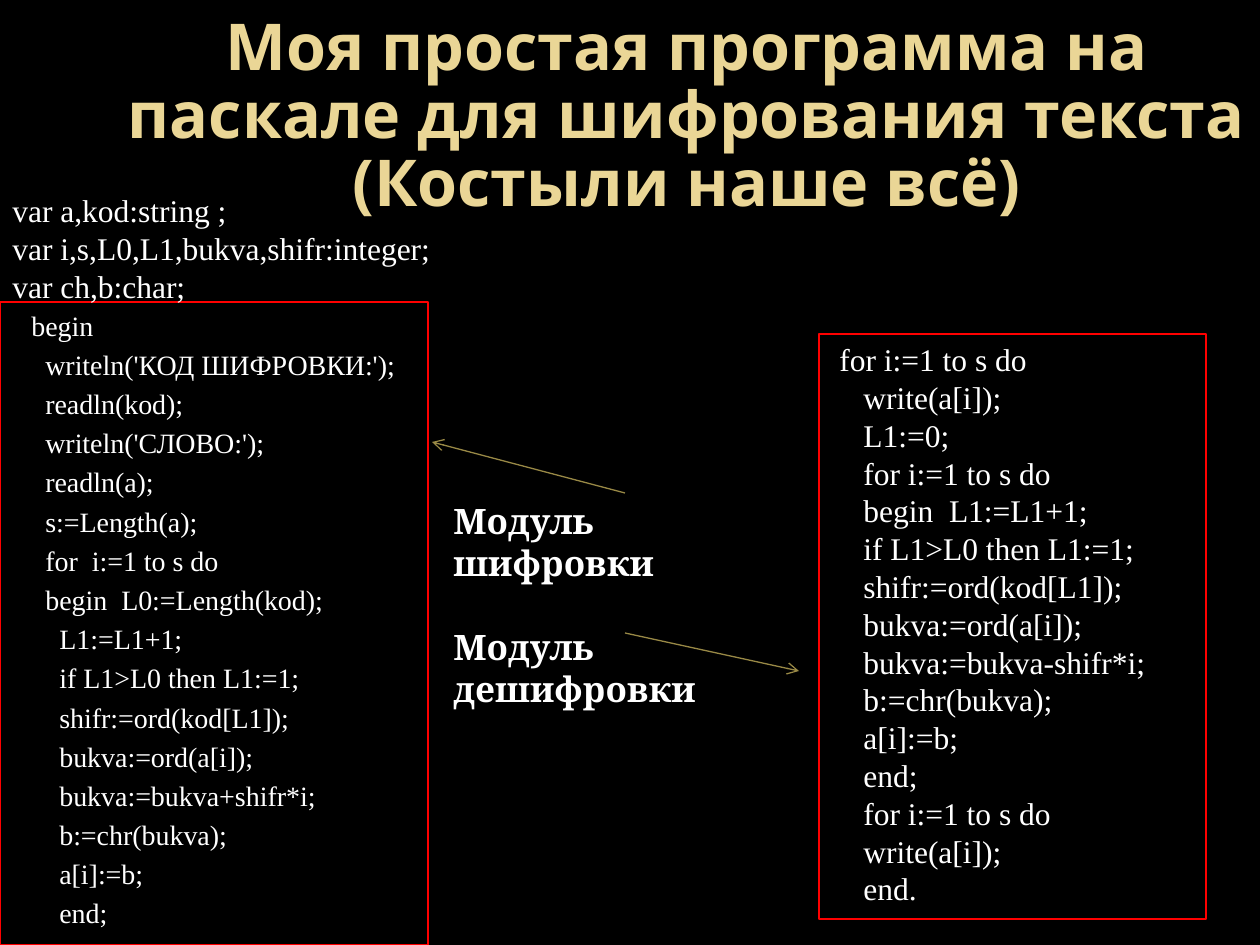
import pptx
import pptx.util
import pptx.dml.color
import pptx.enum.shapes
import pptx.enum.text
import lxml.etree

SCALE = 914400 / 126
Pt = pptx.util.Pt
ALIGN = pptx.enum.text.PP_ALIGN
ANCHOR = pptx.enum.text.MSO_ANCHOR
WHITE, GOLD, RED, OLIVE = "FFFFFF", "EAD696", "FF0000", "998946"
SERIF = "Times New Roman"

HEAD = ["Моя простая программа на паскале для шифрования текста\v(Костыли наше всё)"]
VARS = ["var a,kod:string ;", "var i,s,L0,L1,bukva,shifr:integer;", "var ch,b:char;"]
MODES = ["Модуль шифровки", "Модуль дешифровки"]
CODE = [
    (0, "begin"),
    (14, "writeln('КОД ШИФРОВКИ:');"),
    (14, "readln(kod);"),
    (14, "writeln('СЛОВО:');"),
    (14, "readln(a);"),
    (14, "s:=Length(a);"),
    (14, "for  i:=1 to s do"),
    (14, "begin  L0:=Length(kod);"),
    (28, "L1:=L1+1;"),
    (28, "if L1>L0 then L1:=1;"),
    (28, "shifr:=ord(kod[L1]);"),
    (28, "bukva:=ord(a[i]);"),
    (28, "bukva:=bukva+shifr*i;"),
    (28, "b:=chr(bukva);"),
    (28, "a[i]:=b;"),
    (28, "end;"),
]
BACK = [
    "for i:=1 to s do", "write(a[i]);", "L1:=0;", "for i:=1 to s do",
    "begin  L1:=L1+1;", "if L1>L0 then L1:=1;", "shifr:=ord(kod[L1]);",
    "bukva:=ord(a[i]);", "bukva:=bukva-shifr*i;", "b:=chr(bukva);",
    "a[i]:=b;", "end;", "for i:=1 to s do", "write(a[i]);", "end.",
]


def px(n):
    """Turn pixels into EMU."""
    return round(n * SCALE)


def hue(code):
    """Turn a hex string into a colour."""
    return pptx.dml.color.RGBColor.from_string(code)


def put(item, vals):
    """Set each named value on an item."""
    for name, val in vals.items():
        setattr(item, name, val)


def fill(shape, rows, font, para, ink=WHITE, **frame):
    """Write rows of (indent, text) into a shape."""
    body = shape.text_frame
    put(body, {"word_wrap": True, "vertical_anchor": ANCHOR.TOP, **frame})
    for n, (dent, text) in enumerate(rows):
        line = body.add_paragraph() if n else body.paragraphs[0]
        line.text = text
        put(line, {"alignment": ALIGN.LEFT, **para})
        if dent:
            line._p.get_or_add_pPr().set("marL", str(px(dent)))
        for run in line.runs:
            put(run.font, font)
            run.font.color.rgb = hue(ink)


def text(slide, box, rows, font, para, **more):
    """Add a plain text box."""
    shape = slide.shapes.add_textbox(*map(px, box))
    fill(shape, [(0, row) for row in rows], font, para, **more)


def panel(slide, box, rows, font, para):
    """Add a framed block of code."""
    kind = pptx.enum.shapes.MSO_SHAPE.RECTANGLE
    shape = slide.shapes.add_shape(kind, *map(px, box))
    shape.shadow.inherit = False
    shape.fill.background()
    shape.line.color.rgb = hue(RED)
    shape.line.width = Pt(0.75)
    fill(shape, rows, font, para)


def arrow(slide, ends):
    """Add a thin line with an open arrowhead."""
    kind = pptx.enum.shapes.MSO_CONNECTOR.STRAIGHT
    line = slide.shapes.add_connector(kind, *map(px, ends))
    line.line.color.rgb = hue(OLIVE)
    line.line.width = Pt(0.75)
    tag = pptx.oxml.ns.qn
    tip = lxml.etree.SubElement(line.line._get_or_add_ln(), tag("a:tailEnd"))
    tip.set("type", "arrow")
    lxml.etree.SubElement(line._element.spPr, tag("a:effectLst"))


def modes(slide, box):
    """Add the two module labels with their arrows."""
    x, y, w, h = box
    font = {"name": "Cambria", "size": Pt(20), "bold": True}
    text(slide, box, MODES, font, {"space_before": Pt(24)})
    arrow(slide, (x + 184, y, x - 9, y - 51))
    arrow(slide, (x + 184, y + h, x + 358, y + h + 38))


def main():
    """Build the slide and save it."""
    deck = pptx.Presentation()
    put(deck, {"slide_width": px(1260), "slide_height": px(945)})
    slide = deck.slides.add_slide(deck.slide_layouts[6])
    slide.background.fill.solid()
    slide.background.fill.fore_color.rgb = hue("000000")

    big = {"name": "Open Sans", "size": Pt(36.9), "bold": True}
    text(slide, (114, 0, 1146, 236), HEAD, big,
         {"alignment": ALIGN.CENTER, "line_spacing": 0.88},
         ink=GOLD, vertical_anchor=ANCHOR.MIDDLE)
    small = {"name": SERIF, "size": Pt(16)}
    panel(slide, (0, 302, 428, 643), [(19 + d, row) for d, row in CODE], small,
          {"line_spacing": Pt(19.2), "space_before": Pt(3.2)})
    mid = {"name": SERIF, "size": Pt(18)}
    pitch = {"line_spacing": Pt(21.6)}
    panel(slide, (819, 334, 387, 585),
          [(32 if n else 8, row) for n, row in enumerate(BACK)], mid, pitch)
    text(slide, (0, 185, 444, 127), VARS, mid, pitch, word_wrap=False)
    modes(slide, (441, 493, 367, 140))
    deck.save("out.pptx")


if __name__ == "__main__":
    main()
